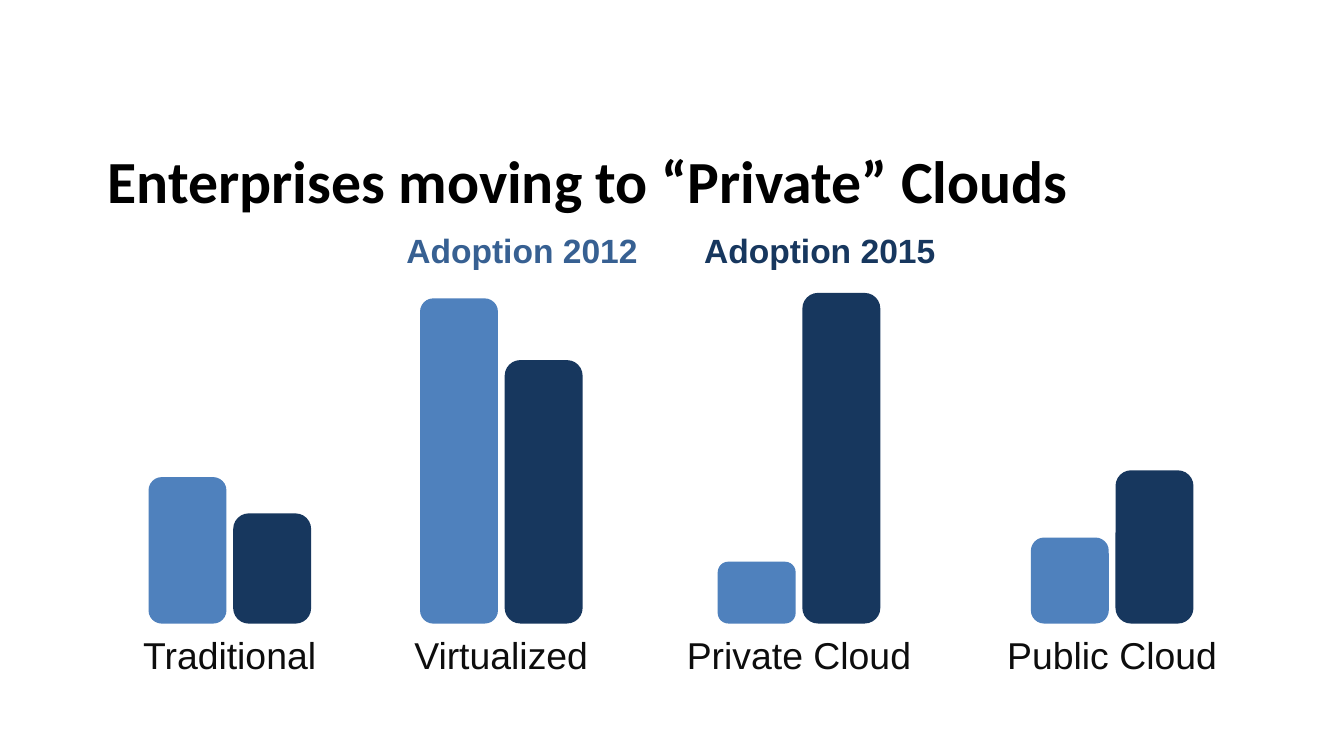
from pptx import Presentation
from pptx.dml.color import RGBColor
from pptx.enum.shapes import MSO_SHAPE
from pptx.enum.text import MSO_ANCHOR, PP_ALIGN
from pptx.util import Inches, Pt

BLACK = RGBColor(0x00, 0x00, 0x00)
INK = RGBColor(0x0D, 0x0D, 0x0D)
NAVY = RGBColor(0x17, 0x37, 0x5E)
STEEL = RGBColor(0x37, 0x60, 0x92)
BLUE = RGBColor(0x4F, 0x81, 0xBD)

WIDE = 10
HIGH = WIDE * 9 / 16
BASE = 4.64     # foot of all bars
BAR, GAP = 0.58, 0.05
ROW = 0.38      # height of a label

TITLE = {"name": "Calibri", "size": Pt(32), "bold": True}
KEY = {"name": "Arial", "size": Pt(18), "bold": True}
LABEL = {"name": "Arial", "size": Pt(20), "bold": False}

# name, left and width of its column, bar heights for 2012 and 2015
GROUPS = [
    ("Traditional", 0.78, 1.86, 1.09, 0.82),
    ("Virtualized", 2.8, 1.86, 2.42, 1.96),
    ("Private Cloud", 4.82, 2.25, 0.46, 2.46),
    ("Public Cloud", 7.24, 2.07, 0.64, 1.14),
]


def add_text(slide, box, words, style, color, align=PP_ALIGN.CENTER, hang=False):
    """Write one line in box; hang gives it a hanging indent."""
    frame = slide.shapes.add_textbox(*map(Inches, box)).text_frame
    form = {
        "word_wrap": True,
        "vertical_anchor": MSO_ANCHOR.TOP,
        "margin_left": Inches(0.11),
        "margin_right": Inches(0.11),
        "margin_top": Inches(0.06),
        "margin_bottom": Inches(0.06),
    }
    for key, value in form.items():
        setattr(frame, key, value)
    para = frame.paragraphs[0]
    para.alignment = align
    para.space_after = Pt(18)
    if hang:
        props = para._p.get_or_add_pPr()
        props.set("marL", str(Inches(0.44)))
        props.set("indent", str(Inches(-0.31)))
    run = para.add_run()
    run.text = words
    for key, value in style.items():
        setattr(run.font, key, value)
    run.font.color.rgb = color


def add_bar(pair, left, tall, color, curve):
    box = map(Inches, (left, BASE - tall, BAR, tall))
    bar = pair.shapes.add_shape(MSO_SHAPE.ROUNDED_RECTANGLE, *box)
    bar.adjustments[0] = curve
    bar.shadow.inherit = False
    bar.fill.solid()
    bar.fill.fore_color.rgb = color
    bar.line.fill.background()


def add_head(slide, left, top, width):
    add_text(slide, (left, top, width, 0.59),
             "Enterprises moving to “Private” Clouds",
             TITLE, BLACK, PP_ALIGN.LEFT, hang=True)


def add_keys(slide, top):
    for words, left, width, color in (
        ("Adoption 2015", 4.82, 2.43, NAVY),
        ("Adoption 2012", 2.75, 2.14, STEEL),
    ):
        add_text(slide, (left, top, width, ROW), words, KEY, color, hang=True)


def add_group(slide, name, left, width, old, new):
    """Centre a pair of bars over their label."""
    add_text(slide, (left, BASE, width, ROW), name, LABEL, INK)
    start = left + (width - 2 * BAR - GAP) / 2
    pair = slide.shapes.add_group_shape()
    add_bar(pair, start + BAR + GAP, new, NAVY, 0.2)
    add_bar(pair, start, old, BLUE, 0.17)


def main():
    deck = Presentation()
    deck.slide_width, deck.slide_height = Inches(WIDE), Inches(HIGH)
    slide = deck.slides.add_slide(deck.slide_layouts[6])
    add_head(slide, 0.56, 1.01, 8.64)
    add_keys(slide, 1.65)
    for group in GROUPS:
        add_group(slide, *group)
    deck.save("out.pptx")


if __name__ == "__main__":
    main()
